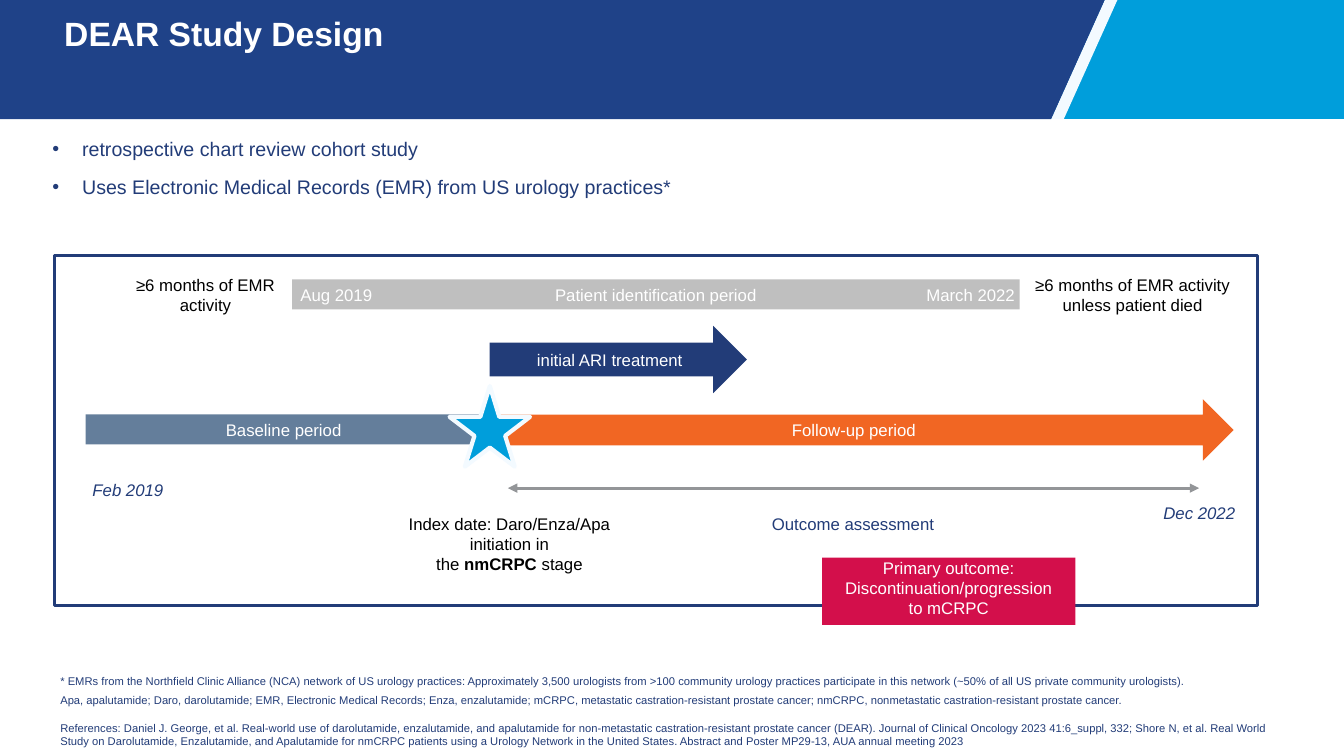
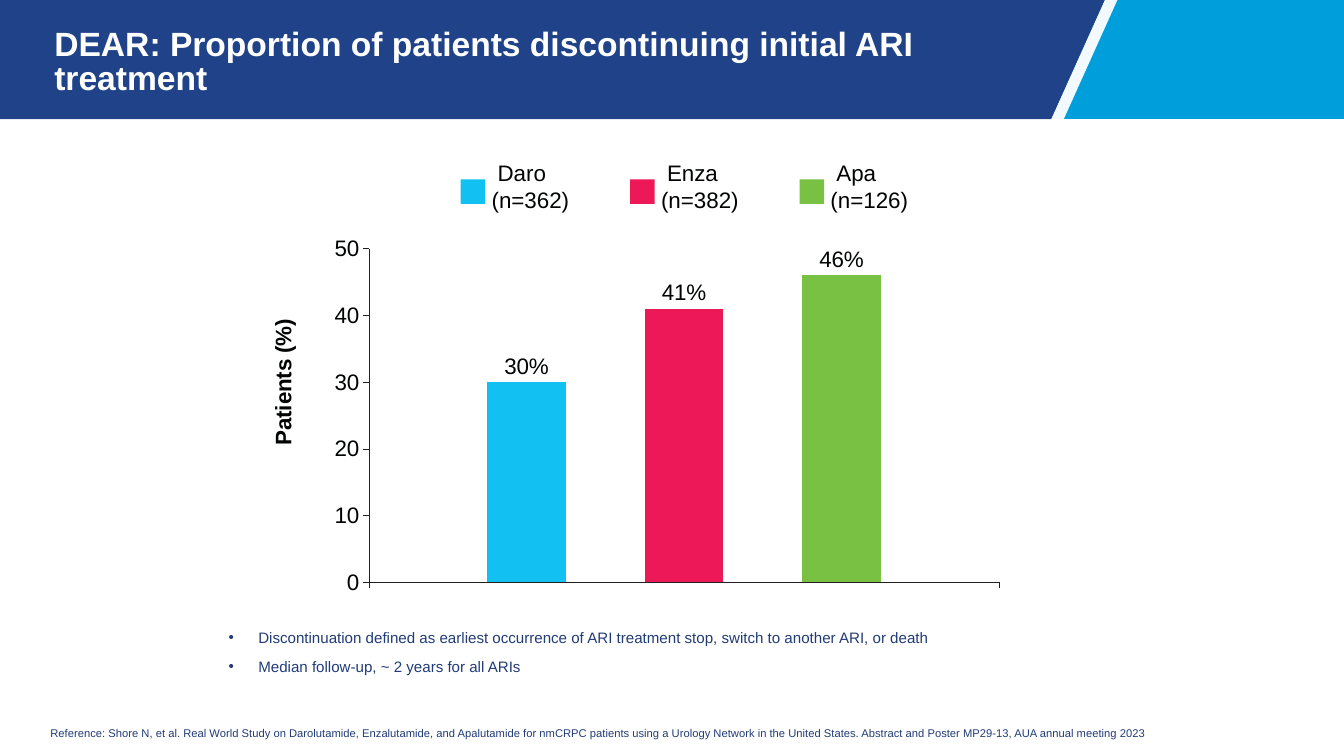
from lxml.etree import SubElement
from pptx import Presentation
from pptx.chart.data import CategoryChartData
from pptx.dml.color import RGBColor
from pptx.enum.chart import XL_CHART_TYPE, XL_LABEL_POSITION, XL_TICK_LABEL_POSITION, XL_TICK_MARK
from pptx.enum.shapes import MSO_CONNECTOR, MSO_SHAPE
from pptx.enum.text import MSO_ANCHOR, PP_ALIGN
from pptx.oxml import parse_xml
from pptx.oxml.ns import nsdecls, qn
from pptx.util import Cm, Pt

# Shared look
FONT = "Arial"
WHITE, BLACK, INK = "FFFFFF", "000000", "010202"
NAVY, BAND, SKY, PALE = "223C78", "1F4288", "009EDB", "F3FAFF"
STEEL, ORANGE, SILVER, GREY, RED = "647E9B", "F16623", "BFBFBF", "939598", "D30F4B"
AXIS = "231F20"
LEFT, MID, RIGHT = PP_ALIGN.LEFT, PP_ALIGN.CENTER, PP_ALIGN.RIGHT
TOP, MIDDLE = MSO_ANCHOR.TOP, MSO_ANCHOR.MIDDLE
INSET = (0.25, 0.13, 0.25, 0.13)
NONE = (0, 0, 0, 0)
WIDTH, HEIGHT = 33.87, 19.05

ARMS = [  # name, patients, share in %, colour
    ("Daro", 362, 30, "13C0F2"),
    ("Enza", 382, 41, "ED1857"),
    ("Apa", 126, 46, "79C143"),
]


def tint(code):
    return RGBColor.from_string(code)


def style(font, size, color, bold=False, slant=False):
    font.name, font.size = FONT, Pt(size)
    font.bold, font.italic = bold, slant
    font.color.rgb = tint(color)


def paint(shape, fill=None, line=None, weight=1):
    shape.shadow.inherit = False
    if fill:
        shape.fill.solid()
        shape.fill.fore_color.rgb = tint(fill)
    else:
        shape.fill.background()
    if line:
        shape.line.color.rgb = tint(line)
        shape.line.width = Pt(weight)
    else:
        shape.line.fill.background()
    return shape


def draw(slide, kind, box, fill=None, line=None, weight=1):
    shape = slide.shapes.add_shape(kind, *map(Cm, box))
    return paint(shape, fill, line, weight)


def outline(slide, points, fill):
    pen = slide.shapes.build_freeform(Cm(points[0][0]), Cm(points[0][1]))
    pen.add_line_segments([(Cm(x), Cm(y)) for x, y in points[1:]])
    paint(pen.convert_to_shape(), fill)


def write(shape, text, size=12, color=WHITE, align=MID, anchor=MIDDLE,
          inset=INSET, wrap=True, bold=False, slant=False, after=(), lead=None):
    frame = shape.text_frame
    frame.word_wrap, frame.vertical_anchor = wrap, anchor
    (frame.margin_left, frame.margin_top,
     frame.margin_right, frame.margin_bottom) = map(Cm, inset)
    frame.text = text
    for para in frame.paragraphs:
        para.alignment = align
        if lead:
            para.line_spacing = lead
        for run in para.runs:
            style(run.font, size, color, bold, slant)
    for para, gap in zip(frame.paragraphs, after):
        para.space_after = Pt(gap)
    return frame


def label(slide, box, text, **look):
    return write(slide.shapes.add_textbox(*map(Cm, box)), text, **look)


def bullets(slide, box, lines, size, lead=None):
    frame = label(slide, box, "\n".join(lines), size=size, color=NAVY, align=LEFT,
                  anchor=TOP, after=[10] * len(lines), lead=lead)
    for para in frame.paragraphs:
        props = para._p.get_or_add_pPr()
        props.set("marL", str(Cm(0.75)))
        props.set("indent", str(-Cm(0.75)))
        SubElement(props, qn("a:buFont")).set("typeface", FONT)
        SubElement(props, qn("a:buChar")).set("char", "•")


def notes(slide, box, lines, after=()):
    label(slide, box, "\n".join(lines), size=8, color=NAVY, align=LEFT,
          anchor=TOP, after=after)


def header(slide, box, title, anchor=MIDDLE, inset=INSET):
    """Title band with a slanted end."""
    x, y, w, h = box
    low, high = x + 26.49, x + 27.84
    draw(slide, MSO_SHAPE.RECTANGLE, (low, y, x + w - low, h), SKY)
    outline(slide, [(high, y), (high + 0.32, y), (low + 0.32, y + h), (low, y + h)], PALE)
    outline(slide, [(x, y), (high, y), (low, y + h), (x, y + h)], BAND)
    label(slide, (x + 1.37, y + 0.36, 24.13, 2.46), title, size=24, align=LEFT,
          anchor=anchor, inset=inset, bold=True, lead=0.85)


def span(slide, start, end, y):
    """Line with an arrowhead at both ends."""
    line = slide.shapes.add_connector(MSO_CONNECTOR.STRAIGHT, Cm(start), Cm(y), Cm(end), Cm(y))
    line.line.color.rgb = tint(GREY)
    line.line.width = Pt(2.25)
    for tag in ("a:headEnd", "a:tailEnd"):
        SubElement(line.line._get_or_add_ln(), qn(tag)).set("type", "triangle")
    SubElement(line._element.spPr, qn("a:effectLst"))


def timeline(slide, box):
    x, y, w, h = box

    def at(dx, dy, *size):
        return (x + dx, y + dy, *size)

    draw(slide, MSO_SHAPE.RECTANGLE, box, None, NAVY, 2.25)

    # Bars and arrows
    bars = [
        (MSO_SHAPE.RECTANGLE, (5.99, 0.61, 18.34, 0.76), SILVER, "Patient identification period"),
        (MSO_SHAPE.RIGHT_ARROW, (10.97, 1.78, 6.48, 1.7), NAVY, "initial ARI treatment"),
        (MSO_SHAPE.RECTANGLE, (0.79, 4.01, 9.98, 0.76), STEEL, "Baseline period"),
        (MSO_SHAPE.RIGHT_ARROW, (10.97, 3.63, 18.75, 1.55), ORANGE, "Follow-up period"),
    ]
    for kind, place, fill, text in bars:
        write(draw(slide, kind, at(*place), fill), text)
    draw(slide, MSO_SHAPE.STAR_5_POINT, at(9.96, 3.3, 2.03, 2.03), SKY, PALE, 3)
    span(slide, x + 11.43, x + 28.85, y + 5.87)

    # Ends of the identification period
    for place, text, align in [((6.2, 0.61, 2.54, 0.76), "Aug 2019", LEFT),
                               ((21.11, 0.61, 3.1, 0.76), "March 2022", RIGHT)]:
        label(slide, at(*place), text, align=align, inset=NONE)

    # Captions
    for place, text in [((1.65, 0.36, 4.32, 1.27), "≥6 months of EMR activity"),
                        ((24.33, 0.36, 5.69, 1.27), "≥6 months of EMR activity unless patient died")]:
        label(slide, at(*place), text, color=BLACK, anchor=TOP)
    for place, text, slant in [((0.71, 5.54, 2.29, 0.76), "Feb 2019", True),
                               ((26.72, 6.12, 4.27, 0.76), "Dec 2022", True),
                               ((17.45, 6.38, 5.36, 0.76), "Outcome assessment", False)]:
        label(slide, at(*place), text, color=NAVY, slant=slant, wrap=False)

    # Index date
    frame = label(slide, at(8.18, 6.38, 6.58, 1.8),
                  "Index date: Daro/Enza/Apa initiation in\vthe ", color=BLACK, anchor=TOP)
    for text, bold in [("nmCRPC", True), (" stage", False)]:
        run = frame.paragraphs[0].add_run()
        run.text = text
        style(run.font, 12, BLACK, bold)

    # Outcome
    goal = draw(slide, MSO_SHAPE.RECTANGLE, at(19.35, 7.62, 6.38, 1.7), RED)
    write(goal, "Primary outcome:\nDiscontinuation/progression\nto mCRPC",
          anchor=TOP, inset=NONE, wrap=False)


def legend(slide, box):
    x, y, w, h = box
    step = w / len(ARMS)
    for i, (name, count, share, color) in enumerate(ARMS):
        left = x + i * step
        draw(slide, MSO_SHAPE.RECTANGLE, (left, y + 0.58, 0.62, 0.62), color)
        frame = label(slide, (left + 0.78, y, 2.62, h), f"{name} (n={count})", size=16,
                      color=INK, align=LEFT, anchor=TOP, inset=(0, 0.08, 0, 0))
        frame.paragraphs[0]._p.get_or_add_pPr().set("indent", str(Cm(0.15)))


def pin(parent, index, target="", **sizes):
    """Fix the place of a chart part, as shares of the chart."""
    for old in parent.findall(qn("c:layout")):
        parent.remove(old)
    inner = f'<c:layoutTarget val="{target}"/>' if target else ""
    inner += '<c:xMode val="edge"/><c:yMode val="edge"/>'
    inner += "".join(f'<c:{key} val="{size:.4f}"/>' for key, size in sizes.items())
    parent.insert(index, parse_xml(
        f'<c:layout {nsdecls("c")}><c:manualLayout>{inner}</c:manualLayout></c:layout>'))


def graph(slide, box):
    w, h = box[2:]
    data = CategoryChartData()
    data.categories = ["Patients"]
    for name, count, share, color in ARMS:
        data.add_series(name, [share])
    chart = slide.shapes.add_chart(XL_CHART_TYPE.COLUMN_CLUSTERED, *map(Cm, box), data).chart
    chart.has_legend = chart.has_title = False
    style(chart.font, 16, INK)

    # Columns
    plot = chart.plots[0]
    plot.vary_by_categories = False
    plot.gap_width, plot.overlap = 300, -100
    for bar, arm in zip(plot.series, ARMS):
        bar.format.fill.solid()
        bar.format.fill.fore_color.rgb = tint(arm[3])
    plot.has_data_labels = True
    marks = plot.data_labels
    marks.show_value = True
    marks.number_format, marks.number_format_is_linked = '0"%"', False
    marks.position = XL_LABEL_POSITION.OUTSIDE_END
    style(marks.font, 16, INK)

    # Axes
    base, scale = chart.category_axis, chart.value_axis
    base.tick_label_position = XL_TICK_LABEL_POSITION.NONE
    scale.minimum_scale, scale.maximum_scale, scale.major_unit = 0, 50, 10
    for axis in (base, scale):
        axis.has_major_gridlines = False
        axis.major_tick_mark = XL_TICK_MARK.OUTSIDE
        axis.format.line.color.rgb = tint(AXIS)
        axis.format.line.width = Pt(0.5)
    title = scale.axis_title
    title.text_frame.text = "Patients (%)"
    style(title.text_frame.paragraphs[0].runs[0].font, 16, INK, True)
    body = title.text_frame._txBody.bodyPr
    body.set("rot", "-5400000")
    body.set("vert", "horz")

    pin(title._element, 1, x=0.17 / w, y=2.94 / h)
    pin(chart._chartSpace.chart.plotArea, 0, "inner",
        x=2.8 / w, y=1.27 / h, w=15.88 / w, h=8.41 / h)


def design(slide):
    header(slide, (0, 0, WIDTH, 3), "DEAR Study Design", TOP)
    bullets(slide, (1.07, 3.33, 28.3, 2.26), [
        "retrospective chart review cohort study",
        "Uses Electronic Medical Records (EMR) from US urology practices*"], 14)
    timeline(slide, (1.37, 6.43, 30.33, 8.84))
    notes(slide, (1.27, 16.87, 31.47, 2.15), [
        "* EMRs from the Northfield Clinic Alliance (NCA) network of US urology practices: Approximately 3,500 urologists from >100 community urology practices participate in this network (~50% of all US private community urologists).",
        "Apa, apalutamide; Daro, darolutamide; EMR, Electronic Medical Records; Enza, enzalutamide; mCRPC, metastatic castration-resistant prostate cancer; nmCRPC, nonmetastatic castration-resistant prostate cancer.",
        "References: Daniel J. George, et al. Real-world use of darolutamide, enzalutamide, and apalutamide for non-metastatic castration-resistant prostate cancer (DEAR). Journal of Clinical Oncology 2023 41:6_suppl, 332; Shore N, et al. Real World Study on Darolutamide, Enzalutamide, and Apalutamide for nmCRPC patients using a Urology Network in the United States. Abstract and Poster MP29-13, AUA annual meeting 2023"],
        (4, 10, 6))


def results(slide):
    header(slide, (0, 0, WIDTH, 3),
           "DEAR: Proportion of patients discontinuing initial ARI treatment",
           inset=(0, 0.13, 0.25, 0.13))
    graph(slide, (6.5, 5, 19.3, 10.2))
    legend(slide, (11.61, 3.94, 12.81, 1.35))
    bullets(slide, (5.51, 15.8, 24.33, 1.37), [
        "Discontinuation defined as earliest occurrence of ARI treatment stop, switch to another ARI, or death",
        "Median follow-up, ~ 2 years for all ARIs"], 10.8, 0.8)
    notes(slide, (1.02, 18.18, 32.44, 0.62), [
        "Reference: Shore N, et al. Real World Study on Darolutamide, Enzalutamide, and Apalutamide for nmCRPC patients using a Urology Network in the United States. Abstract and Poster MP29-13, AUA annual meeting 2023"])


def main():
    deck = Presentation()
    deck.slide_width, deck.slide_height = Cm(WIDTH), Cm(HEIGHT)
    for build in (design, results):
        build(deck.slides.add_slide(deck.slide_layouts[6]))
    deck.save("out.pptx")


if __name__ == "__main__":
    main()
